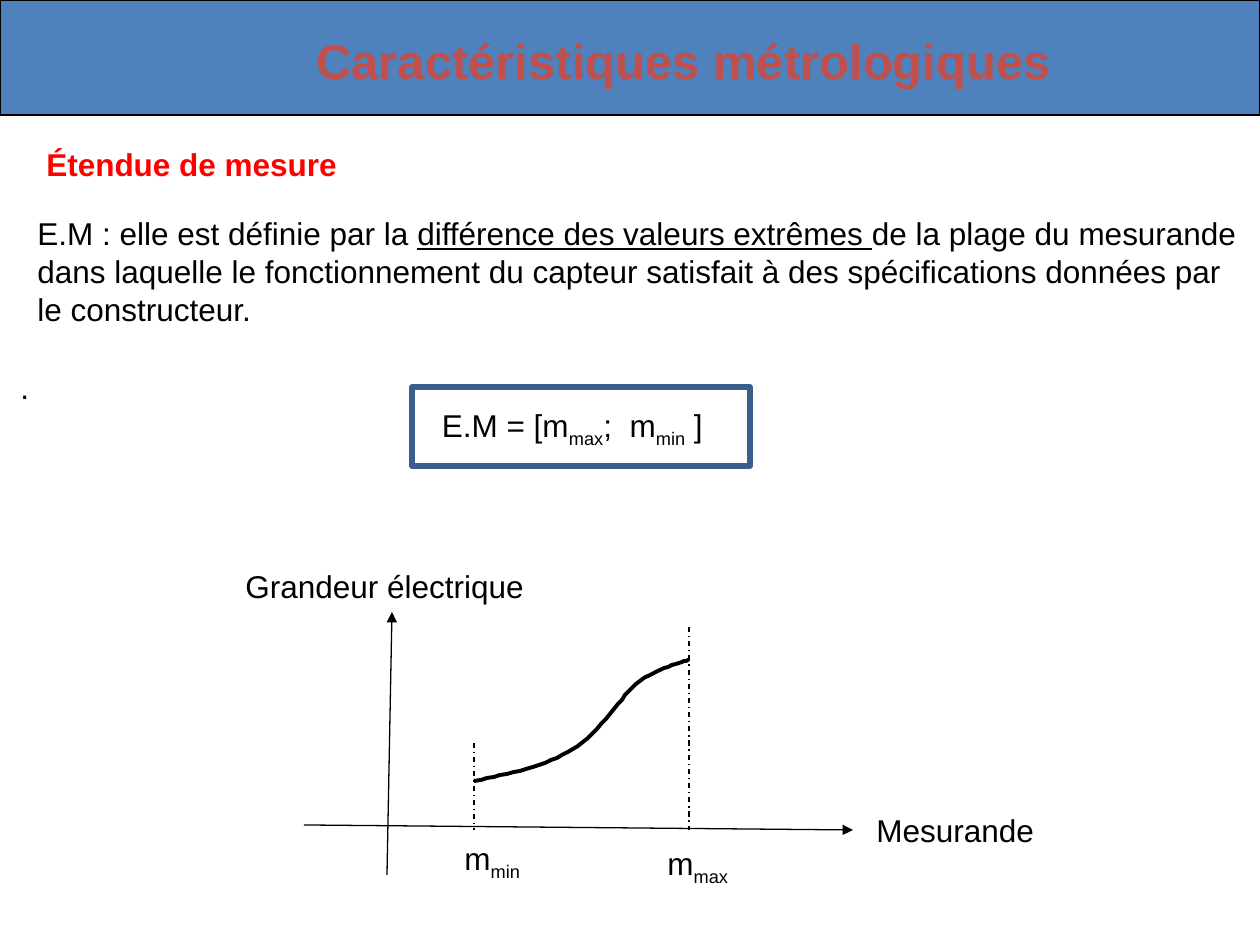
import lxml.etree
import pptx
import pptx.dml.color
import pptx.enum.dml
import pptx.enum.shapes
import pptx.enum.text
import pptx.oxml.ns
import pptx.util

RGBColor = pptx.dml.color.RGBColor
BLACK = RGBColor(0x00, 0x00, 0x00)
WHITE = RGBColor(0xFF, 0xFF, 0xFF)
BLUE = RGBColor(0x4F, 0x81, 0xBD)
DARK_BLUE = RGBColor(0x3A, 0x5F, 0x8C)
BRICK = RGBColor(0xC0, 0x50, 0x4D)
RED = RGBColor(0xFF, 0x00, 0x00)

EMU_PER_PX = 914400 / 126
SUBSCRIPT = "sub"
UNDERLINE = "underline"
CENTER = pptx.enum.text.PP_ALIGN.CENTER
DASH_DOT = pptx.enum.dml.MSO_LINE.DASH_DOT


def px(length):
    return pptx.util.Emu(round(length * EMU_PER_PX))


def bezier_points(start, segments, steps=16):
    """Sample a chain of cubic segments, each given as two controls and an end."""
    points = []
    for control_1, control_2, end in segments:
        for step in range(1, steps + 1):
            t = step / steps
            weights = ((1 - t) ** 3, 3 * t * (1 - t) ** 2, 3 * t * t * (1 - t), t ** 3)
            corners = (start, control_1, control_2, end)
            points.append(tuple(sum(w * corner[axis] for w, corner in zip(weights, corners))
                                for axis in (0, 1)))
        start = end
    return points


class SlideBuilder:
    font = "Arial"
    size = 18

    def __init__(self, slide):
        self.slide = slide

    def outline(self, shape, color, width, dash=None):
        shape.line.color.rgb = color
        shape.line.width = pptx.util.Pt(width)
        if dash:
            shape.line.dash_style = dash

    def rectangle(self, left, top, width, height, color, line_width, fill=None):
        shape = self.slide.shapes.add_shape(
            pptx.enum.shapes.MSO_SHAPE.RECTANGLE, px(left), px(top), px(width), px(height))
        shape.shadow.inherit = False
        if fill is None:
            shape.fill.background()
        else:
            shape.fill.solid()
            shape.fill.fore_color.rgb = fill
        self.outline(shape, color, line_width)

    def text(self, left, top, width, height, paragraphs, color=BLACK, size=None,
             bold=False, wrap=False, last_align=None, extra_right=0):
        """Each paragraph is a list of (words, style) runs."""
        box = self.slide.shapes.add_textbox(px(left), px(top), px(width), px(height))
        frame = box.text_frame
        frame.word_wrap = wrap
        frame.auto_size = pptx.enum.text.MSO_AUTO_SIZE.SHAPE_TO_FIT_TEXT
        frame.margin_right += px(extra_right)
        for index, runs in enumerate(paragraphs):
            paragraph = frame.add_paragraph() if index else frame.paragraphs[0]
            for words, style in runs:
                run = paragraph.add_run()
                run.text = words
                run.font.name = self.font
                run.font.size = pptx.util.Pt(size or self.size)
                run.font.bold = bold
                run.font.color.rgb = color
                if style == UNDERLINE:
                    run.font.underline = True
                elif style == SUBSCRIPT:
                    run._r.get_or_add_rPr().set("baseline", "-25000")
        if last_align is not None:
            paragraph.alignment = last_align

    def line(self, start, end, dash=None, arrow=False):
        connector = self.slide.shapes.add_connector(
            pptx.enum.shapes.MSO_CONNECTOR.STRAIGHT, *map(px, start + end))
        self.outline(connector, BLACK, 0.75, dash)
        if arrow:
            tail = lxml.etree.SubElement(connector.line._get_or_add_ln(),
                                         pptx.oxml.ns.qn("a:tailEnd"))
            tail.set("type", "triangle")
        lxml.etree.SubElement(connector._element.spPr, pptx.oxml.ns.qn("a:effectLst"))

    def curve(self, start, segments):
        builder = self.slide.shapes.build_freeform(*start, scale=EMU_PER_PX)
        builder.add_line_segments(bezier_points(start, segments), close=False)
        shape = builder.convert_to_shape()
        shape.shadow.inherit = False
        shape.fill.solid()
        shape.fill.fore_color.rgb = WHITE
        self.outline(shape, BLACK, 2.25)


def main():
    presentation = pptx.Presentation()
    presentation.slide_width, presentation.slide_height = px(1260), px(945)
    page = SlideBuilder(presentation.slides.add_slide(presentation.slide_layouts[6]))

    page.rectangle(0, 0, 1260, 115, BLACK, 0.75, BLUE)
    page.text(304, 24, 769, 72, [[("Caractéristiques métrologiques", None)]],
              BRICK, size=28, bold=True)
    page.text(34, 139, 328, 50, [[("Étendue de mesure", None)]], RED, bold=True)

    formula = [("E.M = [m", None), ("max", SUBSCRIPT), (";  m", None),
               ("min", SUBSCRIPT), (" ]", None)]
    page.text(8, 362, 1147, 89, [[(".", None)], formula], wrap=True,
              last_align=CENTER, extra_right=18)
    page.rectangle(412, 387, 338, 79, DARK_BLUE, 3)

    x_min, x_max, axis_y = 474, 689, 830
    page.line((387, 875), (392, 612), arrow=True)
    page.line((304, 825), (853, axis_y), arrow=True)
    page.curve((x_min, 781), [((509, 774), (546, 766), (573, 749)),
                              ((601, 732), (621, 695), (640, 681)),
                              ((660, 667), (x_max, 660), (x_max, 660))])
    page.text(864, 805, 185, 50, [[("Mesurande", None)]])
    page.text(233, 561, 306, 50, [[("Grandeur électrique", None)]])

    limits = [("min", x_min, 743, 452, 833, 86), ("max", x_max, 627, 655, 838, 92)]
    for _, x, top, *_ in limits:
        page.line((x, top), (x, axis_y), dash=DASH_DOT)
    for limit, _, _, left, top, width in limits:
        page.text(left, top, width, 50, [[("m", None), (limit, SUBSCRIPT)]])

    page.text(25, 208, 1235, 127, [
        [("E.M : elle est définie par la ", None),
         ("différence des valeurs extrêmes ", UNDERLINE),
         ("de la plage du mesurande", None)],
        [("dans laquelle le fonctionnement du capteur satisfait à des "
          "spécifications données par", None)],
        [("le constructeur.", None)],
    ])
    presentation.save("out.pptx")


if __name__ == "__main__":
    main()
